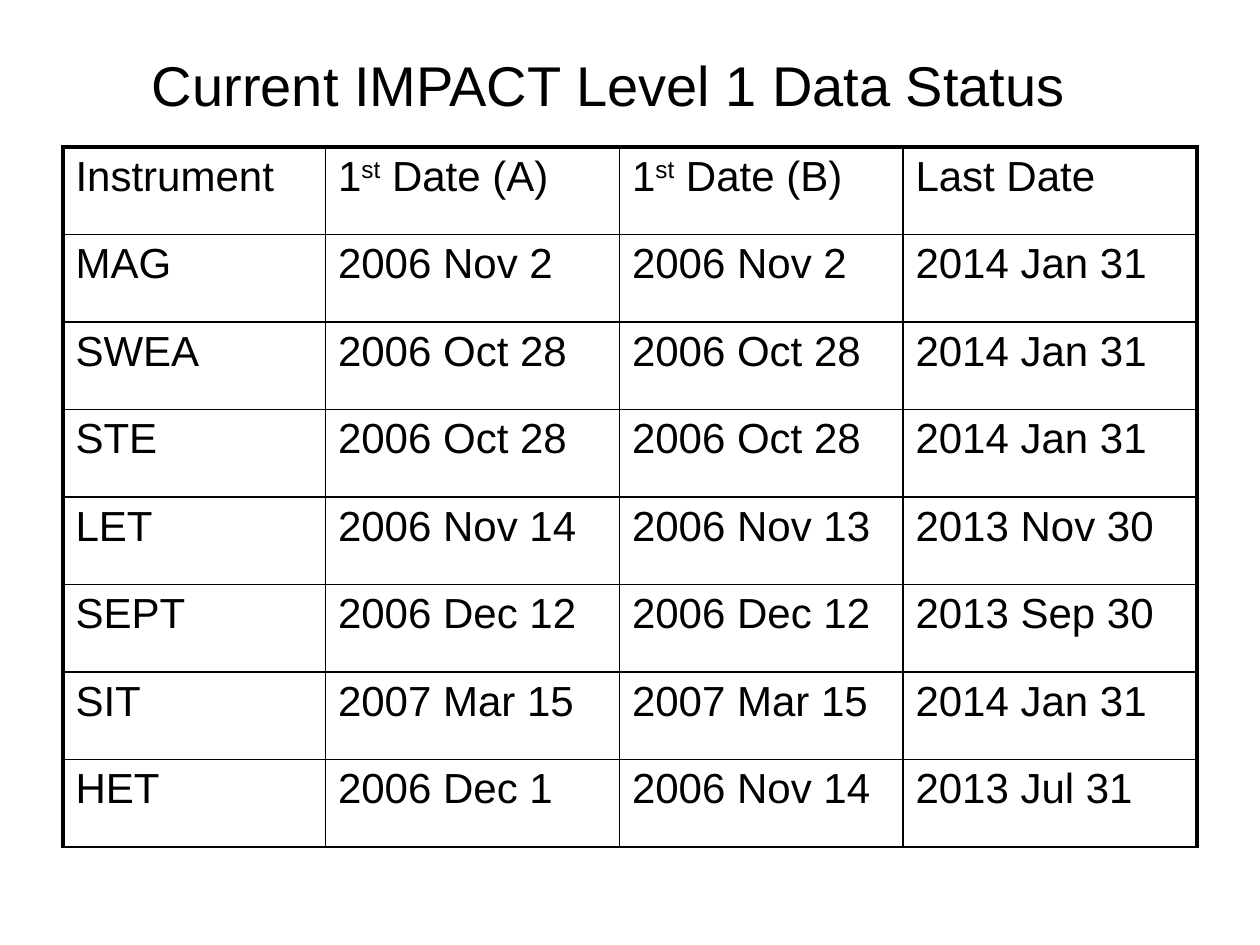
from dataclasses import dataclass

from lxml import etree
from pptx import Presentation
from pptx.dml.color import RGBColor
from pptx.enum.text import MSO_ANCHOR, PP_ALIGN
from pptx.oxml.ns import qn
from pptx.util import Inches, Pt

CENTER = PP_ALIGN.CENTER
MIDDLE = MSO_ANCHOR.MIDDLE
SLIDE_W, SLIDE_H = Inches(10), Inches(7.5)
FONT = "Arial"
BLACK = "000000"
THIN, THICK = 1, 2.25
COLUMN_UNITS = (25, 28, 27, 28)


@dataclass(frozen=True)
class Run:
    text: str
    baseline: int = 0


@dataclass(frozen=True)
class Instrument:
    name: str
    first_a: str
    first_b: str
    last: str

    def cells(self) -> list[list[Run]]:
        return [[Run(t)] for t in (self.name, self.first_a, self.first_b, self.last)]


def first_date(craft: str) -> list[Run]:
    return [Run("1"), Run("st", 30), Run(f" Date ({craft})")]


HEADER = [[Run("Instrument")], first_date("A"), first_date("B"), [Run("Last Date")]]
INSTRUMENTS = [
    Instrument("MAG", "2006 Nov 2", "2006 Nov 2", "2014 Jan 31"),
    Instrument("SWEA", "2006 Oct 28", "2006 Oct 28", "2014 Jan 31"),
    Instrument("STE", "2006 Oct 28", "2006 Oct 28", "2014 Jan 31"),
    Instrument("LET", "2006 Nov 14", "2006 Nov 13", "2013 Nov 30"),
    Instrument("SEPT", "2006 Dec 12", "2006 Dec 12", "2013 Sep 30"),
    Instrument("SIT", "2007 Mar 15", "2007 Mar 15", "2014 Jan 31"),
    Instrument("HET", "2006 Dec 1", "2006 Nov 14", "2013 Jul 31"),
]


def color(value: str) -> RGBColor:
    return RGBColor.from_string(value)


def add_runs(p, runs: list[Run], size: float) -> None:
    for run in runs:
        r = p.add_run()
        r.text = run.text
        r.font.name = FONT
        r.font.size = Pt(size)
        r.font.color.rgb = color(BLACK)
        if run.baseline:
            r.font._element.set("baseline", str(run.baseline * 1000))


def set_space_before(p, percent: int) -> None:
    spacing = etree.SubElement(p._p.get_or_add_pPr(), qn("a:spcBef"))
    etree.SubElement(spacing, qn("a:spcPct")).set("val", str(percent * 1000))


def set_borders(cell, widths: dict[str, float]) -> None:
    props = cell._tc.get_or_add_tcPr()
    for i, (side, width) in enumerate(widths.items()):
        line = etree.Element(qn(f"a:ln{side}"), w=str(Pt(width)))
        fill = etree.SubElement(line, qn("a:solidFill"))
        etree.SubElement(fill, qn("a:srgbClr")).set("val", BLACK)
        props.insert(i, line)


def add_title(s, text: str) -> None:
    sp = s.shapes.add_textbox(
        int(SLIDE_W / 30), int(SLIDE_H * 2 / 45), int(SLIDE_W * 0.9), int(SLIDE_H * 4 / 45)
    )
    tf = sp.text_frame
    tf.word_wrap = True
    tf.vertical_anchor = MIDDLE
    p = tf.paragraphs[0]
    p.alignment = CENTER
    add_runs(p, [Run(text)], 32)


def add_status_table(s, rows: list[list[list[Run]]]) -> None:
    width, height = int(SLIDE_W * 0.9), int(SLIDE_H * 0.741)
    frame = s.shapes.add_table(
        len(rows), len(COLUMN_UNITS), int(SLIDE_W * 0.05), int(SLIDE_H * 7 / 45), width, height
    )
    table = frame.table
    table.first_row = table.horz_banding = False
    for column, units in zip(table.columns, COLUMN_UNITS):
        column.width = int(width * units / sum(COLUMN_UNITS))
    last = len(COLUMN_UNITS) - 1
    for i, row in enumerate(rows):
        table.rows[i].height = height // len(rows)
        for j, runs in enumerate(row):
            cell = table.cell(i, j)
            cell.fill.background()
            set_borders(cell, {
                "L": THICK if j == 0 else THIN,
                "R": THICK if j == last else THIN,
                "T": THICK if i == 0 else THIN,
                "B": THIN,
            })
            p = cell.text_frame.paragraphs[0]
            set_space_before(p, 20)
            add_runs(p, runs, 24)


def main() -> None:
    prs = Presentation()
    prs.slide_width, prs.slide_height = SLIDE_W, SLIDE_H
    s = prs.slides.add_slide(prs.slide_layouts[6])
    add_title(s, "Current IMPACT Level 1 Data Status")
    add_status_table(s, [HEADER] + [item.cells() for item in INSTRUMENTS])
    prs.save("out.pptx")


if __name__ == "__main__":
    main()
